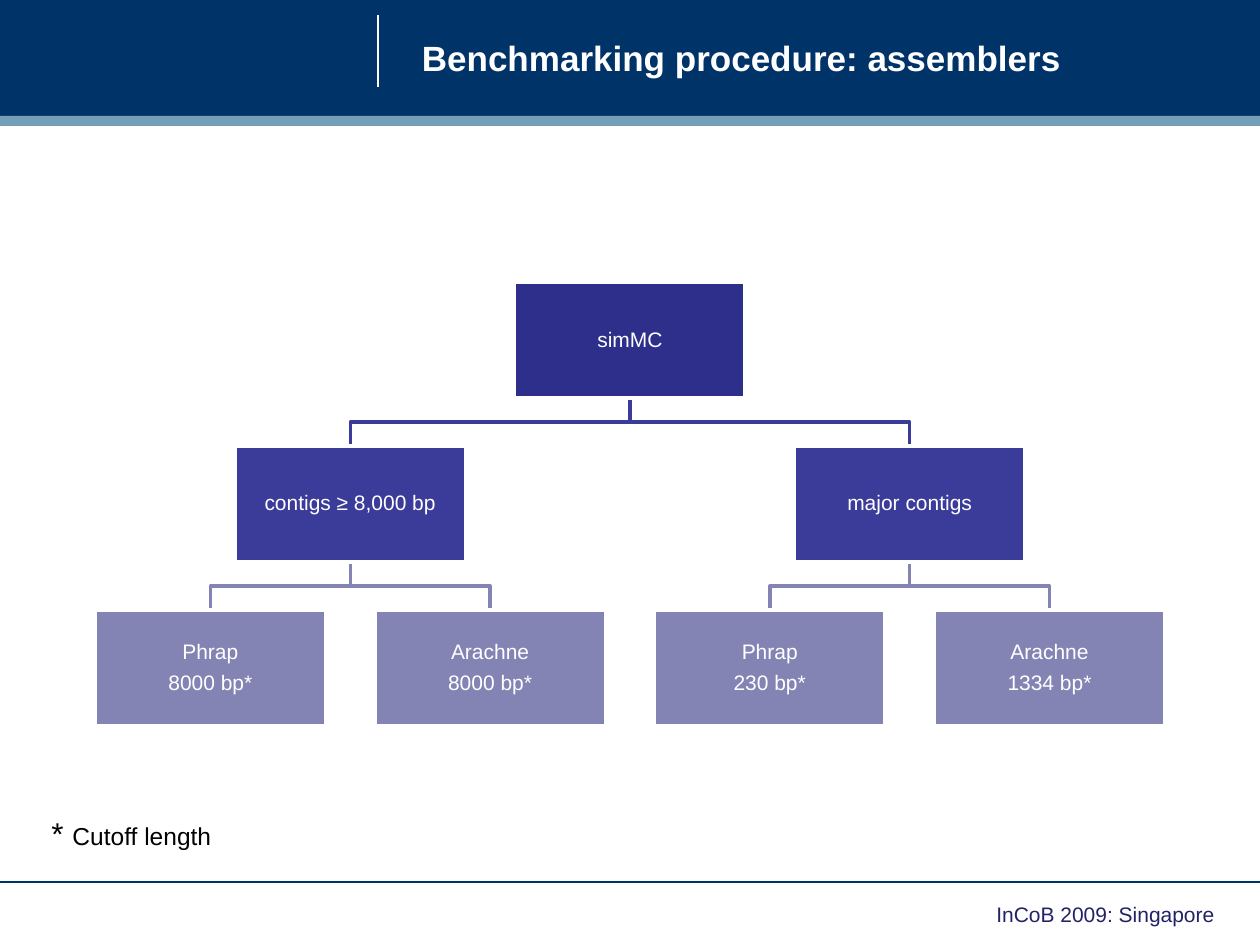
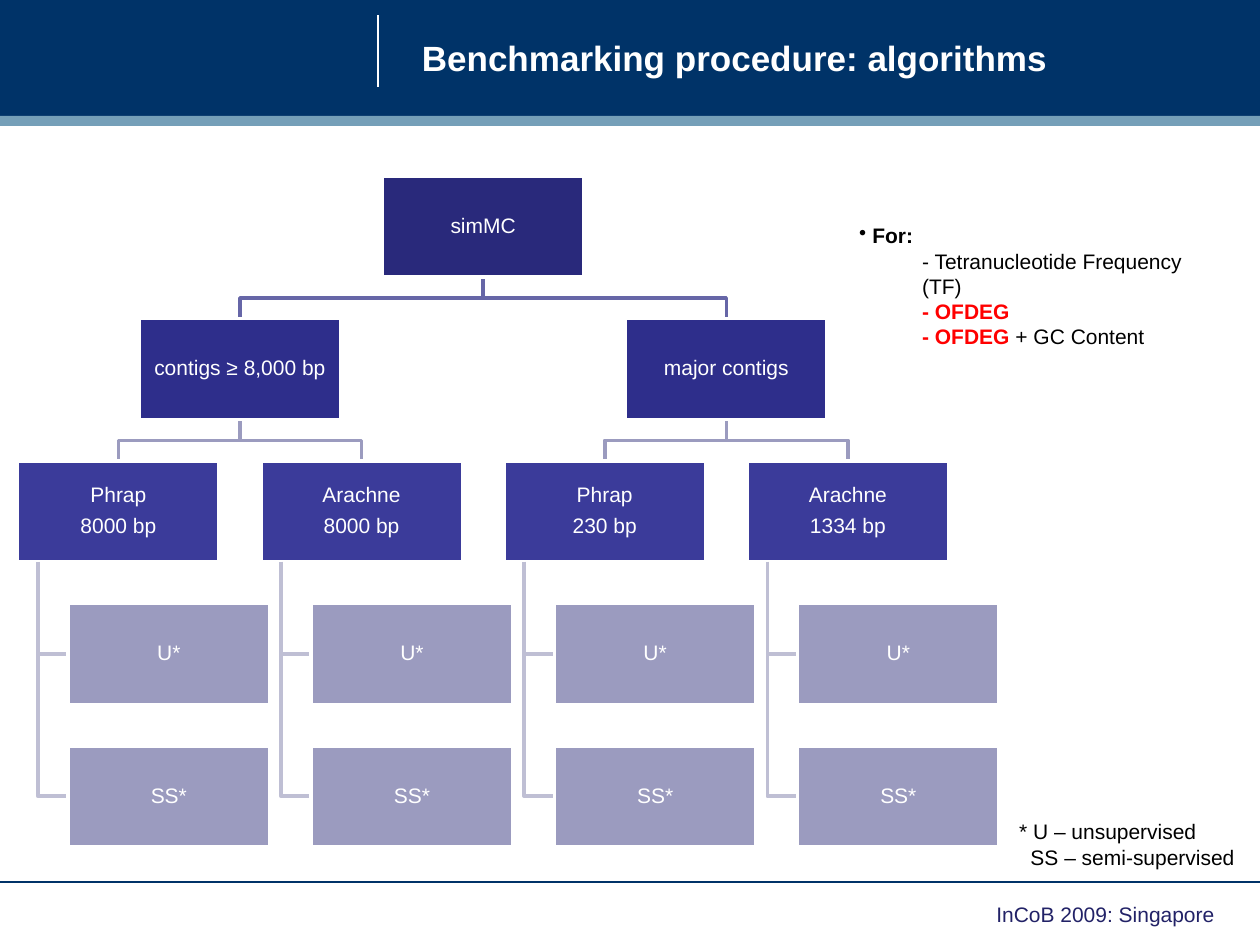
from dataclasses import dataclass

from lxml.etree import SubElement
from pptx import Presentation
from pptx.dml.color import RGBColor
from pptx.enum.shapes import MSO_CONNECTOR, MSO_SHAPE
from pptx.enum.text import MSO_ANCHOR, PP_ALIGN
from pptx.oxml.ns import qn
from pptx.util import Inches, Pt

FONT = "Arial"
WHITE = RGBColor(0xFF, 0xFF, 0xFF)
BLACK = RGBColor(0x00, 0x00, 0x00)
RED = RGBColor(0xFF, 0x00, 0x00)
NAVY = RGBColor(0x00, 0x33, 0x68)
STEEL = RGBColor(0x75, 0x9F, 0xB8)
FOOTER_BLUE = RGBColor(0x22, 0x22, 0x67)
MIDNIGHT = RGBColor(0x29, 0x29, 0x7B)
INDIGO = RGBColor(0x2E, 0x2E, 0x8B)
VIOLET = RGBColor(0x3B, 0x3B, 0x9A)
MEDIUM_VIOLET = RGBColor(0x66, 0x66, 0xA7)
LAVENDER = RGBColor(0x84, 0x84, 0xB4)
PALE_LAVENDER = RGBColor(0x9B, 0x9B, 0xBF)
MIST = RGBColor(0xBF, 0xBF, 0xD4)


@dataclass
class TreeLayout:
    """Sizes in inches; each row has twice the boxes of the row above."""
    box_width: float
    box_height: float
    first_leaf_centre: float
    leaf_pitch: float
    top: float
    row_pitch: float
    fills: list
    links: list

    def row_top(self, row):
        return self.top + row * self.row_pitch

    def centre(self, row, index, row_count):
        leaves_below = 2 ** (row_count - 1 - row)
        leaf = leaves_below * index + (leaves_below - 1) / 2
        return self.first_leaf_centre + leaf * self.leaf_pitch


ASSEMBLER_TREE = TreeLayout(1.83, 0.92, 1.67, 2.22, 2.24, 1.3,
                            [INDIGO, VIOLET, LAVENDER], [VIOLET, LAVENDER])
ALGORITHM_TREE = TreeLayout(1.6, 0.8, 0.94, 1.93, 1.4, 1.13,
                            [MIDNIGHT, INDIGO, VIOLET, PALE_LAVENDER],
                            [MEDIUM_VIOLET, PALE_LAVENDER, MIST])


def add_run(paragraph, text, size, color, bold=False):
    run = paragraph.add_run()
    run.text = text
    run.font.name = FONT
    run.font.size = Pt(size)
    run.font.bold = bold
    run.font.color.rgb = color


def add_text(slide, left, top, width, height, paragraphs, wrap=True,
             anchor=MSO_ANCHOR.TOP):
    """Each paragraph is a list of (text, size, color[, bold]) runs."""
    box = slide.shapes.add_textbox(Inches(left), Inches(top),
                                   Inches(width), Inches(height))
    frame = box.text_frame
    frame.word_wrap = wrap
    frame.vertical_anchor = anchor
    for number, runs in enumerate(paragraphs):
        paragraph = frame.add_paragraph() if number else frame.paragraphs[0]
        for run in runs:
            add_run(paragraph, *run)
    return frame.paragraphs


def indent(paragraph, inches):
    properties = paragraph._p.get_or_add_pPr()
    properties.set("marL", str(Inches(inches)))
    properties.set("indent", "0")


def add_bullet(paragraph):
    indent(paragraph, 0)
    SubElement(paragraph._p.get_or_add_pPr(), qn("a:buChar"), char="•")


def add_rectangle(slide, left, top, width, height, fill):
    rectangle = slide.shapes.add_shape(
        MSO_SHAPE.RECTANGLE, Inches(left), Inches(top),
        Inches(width), Inches(height))
    rectangle.shadow.inherit = False
    rectangle.fill.solid()
    rectangle.fill.fore_color.rgb = fill
    rectangle.line.fill.background()
    return rectangle


def add_rule(slide, start, end, color):
    rule = slide.shapes.add_connector(
        MSO_CONNECTOR.STRAIGHT, *(Inches(value) for value in start + end))
    rule.line.color.rgb = color
    rule.line.width = Pt(0.75)
    SubElement(rule._element.spPr, qn("a:effectLst"))


def add_link(slide, points, color):
    """Draw an open path through points given in inches."""
    start, *rest = [(Inches(x), Inches(y)) for x, y in points]
    builder = slide.shapes.build_freeform(*start)
    builder.add_line_segments(rest, close=False)
    link = builder.convert_to_shape()
    link.shadow.inherit = False
    link.fill.background()
    link.line.color.rgb = color
    link.line.width = Pt(2)


def add_box(slide, tree, left, row, label):
    box = add_rectangle(slide, left, tree.row_top(row), tree.box_width,
                        tree.box_height, tree.fills[min(row, len(tree.fills) - 1)])
    box.line.color.rgb = WHITE
    box.line.width = Pt(2)
    frame = box.text_frame
    frame.word_wrap = True
    frame.vertical_anchor = MSO_ANCHOR.MIDDLE
    frame.margin_left = frame.margin_right = Inches(0.01)
    frame.margin_top = frame.margin_bottom = Inches(0.01)
    for number, line in enumerate(label.split("\n")):
        paragraph = frame.add_paragraph() if number else frame.paragraphs[0]
        paragraph.alignment = PP_ALIGN.CENTER
        paragraph.line_spacing = 0.9
        paragraph.space_after = Pt(4.8)
        add_run(paragraph, line, 12, WHITE)


def add_tree(slide, tree, rows):
    for row, labels in enumerate(rows):
        for index in range(len(labels) if row else 0):
            child = tree.centre(row, index, len(rows))
            parent = tree.centre(row - 1, index // 2, len(rows))
            bottom = tree.row_top(row - 1) + tree.box_height
            middle = (bottom + tree.row_top(row)) / 2
            add_link(slide, [(parent, bottom), (parent, middle), (child, middle),
                             (child, tree.row_top(row))], tree.links[row - 1])
    for row, labels in enumerate(rows):
        for index, label in enumerate(labels):
            left = tree.centre(row, index, len(rows)) - tree.box_width / 2
            add_box(slide, tree, left, row, label)


def add_hanging_boxes(slide, tree, rows, labels):
    """Hang the same labels, one below the other, from every leaf."""
    leaf_row = len(rows) - 1
    stem_top = tree.row_top(leaf_row) + tree.box_height
    for index in range(len(rows[-1])):
        leaf_left = tree.centre(leaf_row, index, len(rows)) - tree.box_width / 2
        stem, left = leaf_left + 0.16, leaf_left + 0.4
        for row, label in enumerate(labels, leaf_row + 1):
            middle = tree.row_top(row) + tree.box_height / 2
            add_link(slide, [(stem, stem_top), (stem, middle), (left, middle)],
                     tree.links[-1])
            add_box(slide, tree, left, row, label)


def add_framed_slide(presentation, title):
    """Add a slide with the header band, title and footer."""
    slide = presentation.slides.add_slide(presentation.slide_layouts[6])
    add_rectangle(slide, 0, 0, 10, 0.92, NAVY)
    add_rule(slide, (3, 0.12), (3, 0.69), WHITE)
    add_rule(slide, (0, 7), (10, 7), NAVY)
    add_rectangle(slide, 0, 0.92, 10, 0.08, STEEL)
    add_text(slide, 7.81, 7.11, 1.94, 0.3,
             [[("InCoB 2009: Singapore", 12, FOOTER_BLUE)]], wrap=False)
    add_text(slide, 3.25, 0.08, 6.33, 0.75, [[(title, 20, WHITE, True)]],
             anchor=MSO_ANCHOR.MIDDLE)
    return slide


def tree_rows(cutoff_mark=""):
    assemblies = [("Phrap", 8000), ("Arachne", 8000),
                  ("Phrap", 230), ("Arachne", 1334)]
    return [["simMC"], ["contigs ≥ 8,000 bp", "major contigs"],
            [f"{name}\n{cutoff} bp{cutoff_mark}" for name, cutoff in assemblies]]


def add_assemblers_slide(presentation):
    slide = add_framed_slide(presentation, "Benchmarking procedure: assemblers")
    add_tree(slide, ASSEMBLER_TREE, tree_rows("*"))
    add_text(slide, 0.31, 6.41, 1.48, 0.4,
             [[("* ", 18, BLACK), ("Cutoff length", 14, BLACK)]], wrap=False)


def add_algorithms_slide(presentation):
    slide = add_framed_slide(presentation, "Benchmarking procedure: algorithms")
    heading, *features = add_text(slide, 6.72, 1.72, 3.12, 0.91, [
        [(" For:", 12, BLACK, True)],
        [("- Tetranucleotide Frequency (TF)", 12, BLACK)],
        [("- OFDEG", 12, RED, True)],
        [("- OFDEG ", 12, RED, True), ("+ GC Content", 12, BLACK)],
    ])
    add_bullet(heading)
    for feature in features:
        indent(feature, 0.5)
    rows = tree_rows()
    add_tree(slide, ALGORITHM_TREE, rows)
    add_hanging_boxes(slide, ALGORITHM_TREE, rows, ["U*", "SS*"])
    legend = add_text(slide, 7.99, 6.45, 1.93, 0.5, [
        [("* U – unsupervised", 12, BLACK)],
        [("SS – semi-supervised", 12, BLACK)],
    ], wrap=False)
    indent(legend[1], 0.09)


def main():
    presentation = Presentation()
    presentation.slide_width = Inches(10)
    presentation.slide_height = Inches(7.5)
    add_assemblers_slide(presentation)
    add_algorithms_slide(presentation)
    presentation.save("out.pptx")


if __name__ == "__main__":
    main()
